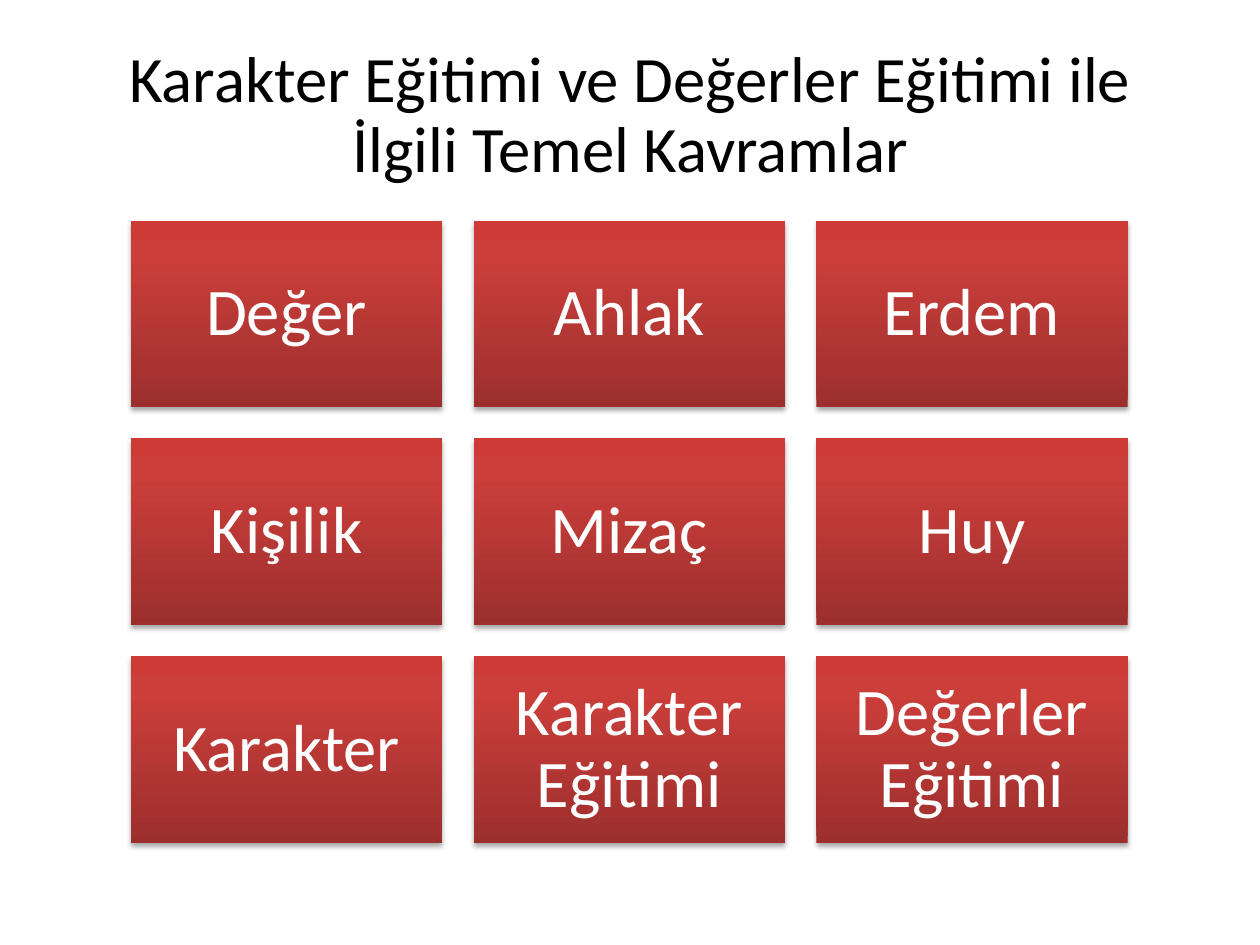
from copy import deepcopy
from lxml.etree import SubElement
from pptx import Presentation
from pptx.dml.color import RGBColor
from pptx.enum.shapes import MSO_SHAPE
from pptx.enum.text import MSO_ANCHOR, PP_ALIGN
from pptx.oxml.ns import qn
from pptx.util import Inches, Pt

BLACK = RGBColor(0x00, 0x00, 0x00)
WHITE = RGBColor(0xFF, 0xFF, 0xFF)
STOPS = [
    (0, RGBColor(0x9C, 0x2F, 0x2D)),
    (0.8, RGBColor(0xCB, 0x3E, 0x3A)),
    (1, RGBColor(0xCE, 0x3B, 0x37)),
]
TERMS = [
    ["Değer", "Ahlak", "Erdem"],
    ["Kişilik", "Mizaç", "Huy"],
    ["Karakter", "Karakter Eğitimi", "Değerler Eğitimi"],
]
LEFT, TOP = 1.04, 1.75
WIDTH, HEIGHT, GAP = 2.47, 1.48, 0.25


def write(shape, text, size, color):
    """Put one centred run of text in the shape."""
    frame = shape.text_frame
    frame.word_wrap = True
    frame.vertical_anchor = MSO_ANCHOR.MIDDLE
    para = frame.paragraphs[0]
    para.alignment = PP_ALIGN.CENTER
    para.line_spacing = 0.9
    run = para.add_run()
    run.text = text
    run.font.name = "Calibri"
    run.font.size = Pt(size)
    run.font.color.rgb = color
    return frame


def shade(shape):
    """Give the shape its red gradient and soft shadow."""
    shape.fill.gradient()
    shape.fill.gradient_angle = 90
    stops = shape.element.spPr.find(".//" + qn("a:gsLst"))
    stops.append(deepcopy(stops[-1]))
    for stop, (place, color) in zip(shape.fill.gradient_stops, STOPS):
        stop.position = place
        stop.color.rgb = color

    shape.shadow.inherit = False
    effects = shape.element.spPr.find(qn("a:effectLst"))
    outer = SubElement(effects, qn("a:outerShdw"), blurRad=str(Pt(3.1)),
                       dist=str(Pt(1.8)), dir="5400000", rotWithShape="0")
    tint = SubElement(outer, qn("a:srgbClr"), val=str(BLACK))
    SubElement(tint, qn("a:alpha"), val="35000")


deck = Presentation()
deck.slide_width, deck.slide_height = Inches(10), Inches(7.5)
slide = deck.slides.add_slide(deck.slide_layouts[5])

title = slide.shapes.title
title.left, title.top = Inches(0.5), Inches(0.3)
title.width, title.height = Inches(9), Inches(1.25)
write(title, "Karakter Eğitimi ve Değerler Eğitimi ile İlgili Temel Kavramlar",
      37, BLACK)

grid = slide.shapes.add_group_shape()
for row, terms in enumerate(TERMS):
    for col, term in enumerate(terms):
        box = grid.shapes.add_shape(
            MSO_SHAPE.RECTANGLE,
            Inches(LEFT + col * (WIDTH + GAP)),
            Inches(TOP + row * (HEIGHT + GAP)),
            Inches(WIDTH), Inches(HEIGHT))
        box.line.fill.background()
        shade(box)
        frame = write(box, term, 38, WHITE)
        frame.margin_left = frame.margin_right = Inches(0.16)
        frame.margin_top = frame.margin_bottom = Inches(0.16)

deck.save("out.pptx")
